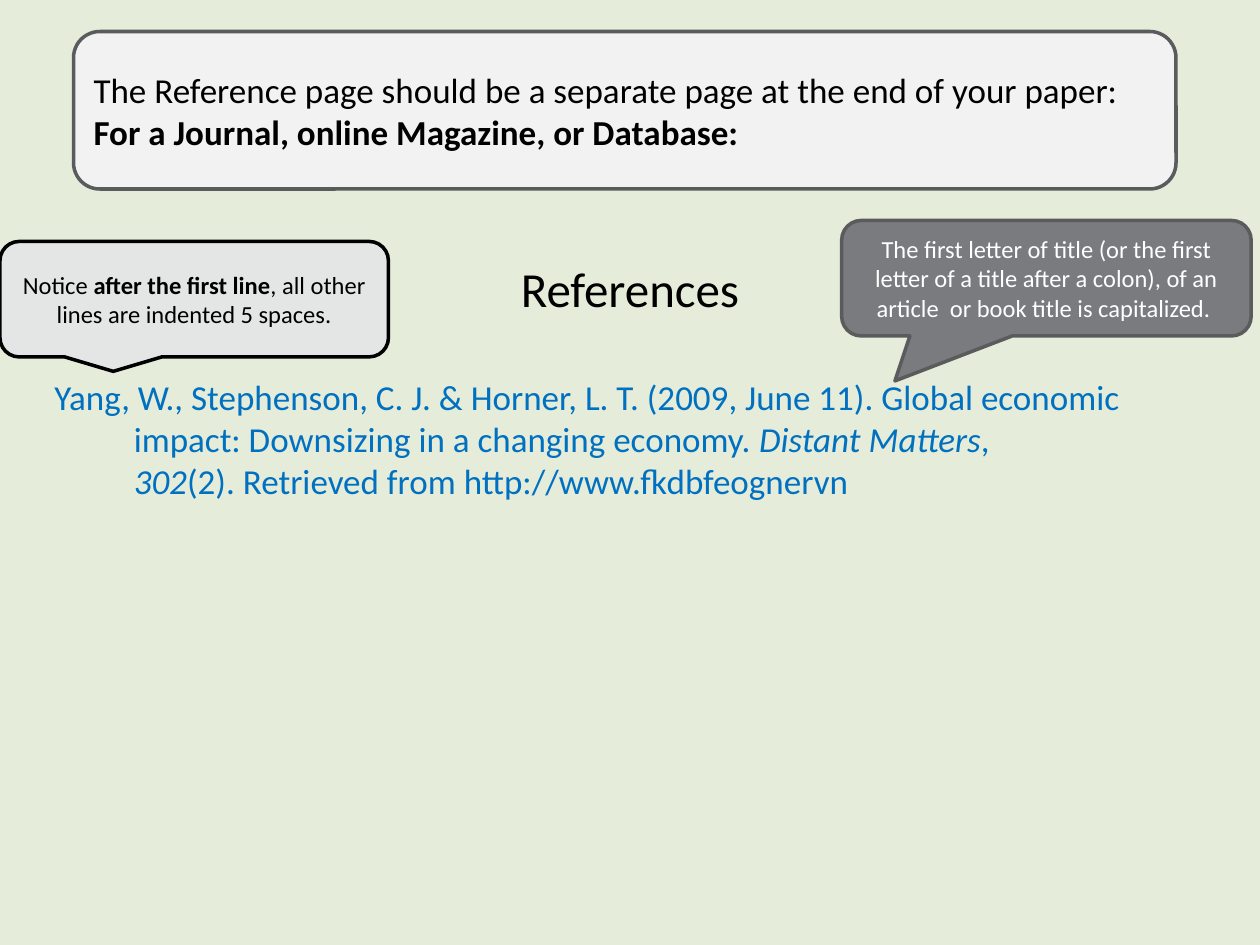
from pptx import Presentation
from pptx.dml.color import RGBColor
from pptx.enum.shapes import MSO_SHAPE
from pptx.enum.text import MSO_ANCHOR, PP_ALIGN
from pptx.util import Inches, Pt

WIDTH, HEIGHT = 10, 7.5
COLORS = {
    "background": "E5ECD9",
    "panel": "F2F2F2",
    "light": "E4E5E5",
    "dark": "797B7E",
    "outline": "5A5B5D",
    "black": "000000",
    "white": "FFFFFF",
    "citation": "0070C0",
}
HANGING_INDENT = 0.63
NO_BREAK_SPACE = chr(160)

REFERENCES = {
    "box": (1 / 30, 4 / 15, 14 / 15, 0.4),
    "paragraphs": [
        {"runs": [("References", {})], "size": 28, "color": "black",
         "align": PP_ALIGN.CENTER, "after": 33.6},
        {"runs": [
            ("Yang, W., Stephenson, C. J. & Horner, L. T. (2009, June 11). "
             "Global economic impact: Downsizing in a changing economy. ", {}),
            ("Distant Matters", {"italic": True}),
            (", ", {}),
            ("302", {"italic": True}),
            (f"(2).{NO_BREAK_SPACE}Retrieved from http://www.fkdbfeognervn", {}),
        ], "size": 20, "color": "citation", "align": PP_ALIGN.LEFT, "after": 0},
    ],
}

PANELS = [
    {"kind": MSO_SHAPE.ROUNDED_RECTANGLE, "box": (7 / 120, 1 / 30, 7 / 8, 1 / 6),
     "fill": "panel", "line": "outline", "adjustments": [],
     "size": 20, "color": "black", "align": PP_ALIGN.LEFT,
     "runs": [
         ("The Reference page should be a separate page at the end of your paper: ", {}),
         ("For a Journal, online Magazine, or Database:", {"bold": True}),
     ]},
    {"kind": MSO_SHAPE.ROUNDED_RECTANGULAR_CALLOUT, "box": (0, 23 / 90, 37 / 120, 11 / 90),
     "fill": "light", "line": "black", "adjustments": [],
     "size": 14, "color": "black", "align": PP_ALIGN.CENTER,
     "runs": [
         ("Notice ", {}),
         ("after the first line", {"bold": True}),
         (", all other lines are indented 5 spaces.", {}),
     ]},
    {"kind": MSO_SHAPE.ROUNDED_RECTANGULAR_CALLOUT, "box": (0.668, 7 / 30, 0.325, 11 / 90),
     "fill": "dark", "line": "outline", "adjustments": [-0.37, 0.89, 0.17],
     "size": 14, "color": "white", "align": PP_ALIGN.CENTER,
     "runs": [
         ("The first letter of title (or the first letter of a title after a colon), "
          "of an article  or book title is capitalized. ", {}),
     ]},
]


def rgb(name):
    return RGBColor.from_string(COLORS[name])


def place(box):
    return [Inches(share * side) for share, side in zip(box, (WIDTH, HEIGHT) * 2)]


def write_paragraph(paragraph, content):
    paragraph.alignment = content["align"]
    for text, emphasis in content["runs"]:
        run = paragraph.add_run()
        run.text = text
        run.font.color.rgb = rgb(content["color"])
        formats = {"name": "Calibri", "size": Pt(content["size"]), **emphasis}
        for attribute, value in formats.items():
            setattr(run.font, attribute, value)


def add_references(slide):
    frame = slide.shapes.add_textbox(*place(REFERENCES["box"])).text_frame
    frame.word_wrap = True
    for index, content in enumerate(REFERENCES["paragraphs"]):
        paragraph = frame.add_paragraph() if index else frame.paragraphs[0]
        write_paragraph(paragraph, content)
        paragraph.space_after = Pt(content["after"])
        properties = paragraph._p.get_or_add_pPr()
        properties.set("marL", str(Inches(HANGING_INDENT)))
        properties.set("indent", str(-Inches(HANGING_INDENT)))


def add_panel(slide, panel):
    shape = slide.shapes.add_shape(panel["kind"], *place(panel["box"]))
    shape.shadow.inherit = False
    shape.fill.solid()
    shape.fill.fore_color.rgb = rgb(panel["fill"])
    shape.line.color.rgb = rgb(panel["line"])
    shape.line.width = Pt(2)
    for index, value in enumerate(panel["adjustments"]):
        shape.adjustments[index] = value
    frame = shape.text_frame
    for attribute, value in {"word_wrap": True, "vertical_anchor": MSO_ANCHOR.MIDDLE}.items():
        setattr(frame, attribute, value)
    write_paragraph(frame.paragraphs[0], panel)


def main():
    presentation = Presentation()
    presentation.slide_width = Inches(WIDTH)
    presentation.slide_height = Inches(HEIGHT)
    slide = presentation.slides.add_slide(presentation.slide_layouts[6])
    slide.background.fill.solid()
    slide.background.fill.fore_color.rgb = rgb("background")
    add_references(slide)
    for panel in PANELS:
        add_panel(slide, panel)
    presentation.save("out.pptx")


if __name__ == "__main__":
    main()
